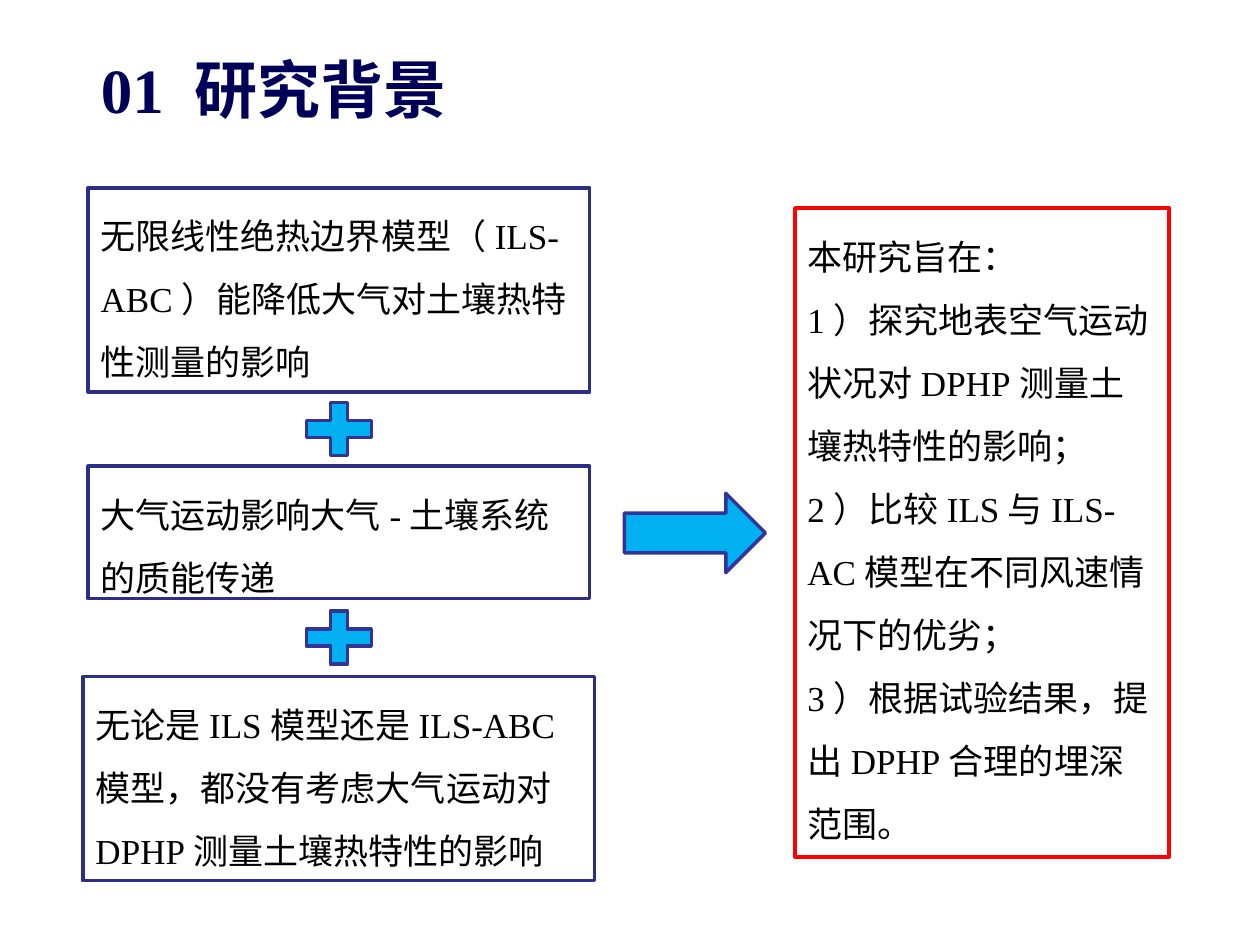
from dataclasses import dataclass
from itertools import pairwise

from pptx import Presentation
from pptx import util as u
from pptx.dml.color import RGBColor
from pptx.enum import shapes, text

CELL = 0.1  # the slide is a grid of 100 columns by 75 rows
COLUMNS, ROWS = 100, 75


@dataclass(frozen=True)
class Theme:
    font: str = "Times New Roman"
    title_size: int = 36
    body_size: int = 20
    title: str = "000058"
    ink: str = "000000"
    paper: str = "FFFFFF"
    premise: str = "2D2D8A"
    aim: str = "FF0000"
    symbol: str = "00B0F0"
    symbol_line: str = "333399"
    line_width: int = 2


THEME = Theme()

# Premises, top to bottom: first row, columns wide, rows high, wording
STACK_CENTRE = 26.9
PREMISES = [
    (14.9, 39.8, 16.2, "无限线性绝热边界模型（ILS-ABC）能降低大气对土壤热特性测量的影响"),
    (37, 39.8, 10.5, "大气运动影响大气-土壤系统的质能传递"),
    (53.7, 40.6, 16.2, "无论是ILS模型还是ILS-ABC模型，都没有考虑大气运动对DPHP测量土壤热特性的影响"),
]
AIMS = [
    "本研究旨在：",
    "1）探究地表空气运动状况对DPHP测量土壤热特性的影响；",
    "2）比较ILS与ILS-AC模型在不同风速情况下的优劣；",
    "3）根据试验结果，提出DPHP合理的埋深范围。",
]


def cells(*counts):
    return [u.Inches(count * CELL) for count in counts]


def set_font(para, size, colour, bold=False):
    para.font.name = THEME.font
    para.font.size = u.Pt(size)
    para.font.bold = bold
    para.font.color.rgb = RGBColor.from_string(colour)


def add_title(page, wording, *place):
    title = page.shapes.title
    title.left, title.top, title.width, title.height = cells(*place)
    frame = title.text_frame
    frame.text = wording
    frame.auto_size = text.MSO_AUTO_SIZE.NONE
    frame.vertical_anchor = text.MSO_ANCHOR.MIDDLE
    para = frame.paragraphs[0]
    para.alignment = text.PP_ALIGN.LEFT
    set_font(para, THEME.title_size, THEME.title, bold=True)


def add_outlined(page, kind, place, fill, line):
    shape = page.shapes.add_shape(kind, *cells(*place))
    shape.shadow.inherit = False
    shape.fill.solid()
    shape.fill.fore_color.rgb = RGBColor.from_string(fill)
    shape.line.color.rgb = RGBColor.from_string(line)
    shape.line.width = u.Pt(THEME.line_width)
    return shape


def add_text_box(page, lines, place, line):
    box = add_outlined(page, shapes.MSO_SHAPE.RECTANGLE, place, THEME.paper, line)
    frame = box.text_frame
    frame.word_wrap = True
    frame.auto_size = text.MSO_AUTO_SIZE.SHAPE_TO_FIT_TEXT
    frame.vertical_anchor = text.MSO_ANCHOR.TOP
    frame.text = "\n".join(lines)
    for para in frame.paragraphs:
        para.alignment = text.PP_ALIGN.LEFT
        para.line_spacing = 1.5
        set_font(para, THEME.body_size, THEME.ink)


def add_symbol(page, kind, centre, width, height, rotation=0):
    column, row = centre
    place = (column - width / 2, row - height / 2, width, height)
    symbol = add_outlined(page, kind, place, THEME.symbol, THEME.symbol_line)
    symbol.rotation = rotation


def main():
    deck = Presentation()
    deck.slide_width, deck.slide_height = cells(COLUMNS, ROWS)
    page = deck.slides.add_slide(deck.slide_layouts.get_by_name("Title Only"))
    add_title(page, "01 研究背景", 7, 3.1, 74.2, 7.9)

    # Premises, centred on one axis
    for top, width, height, wording in PREMISES:
        place = (STACK_CENTRE - width / 2, top, width, height)
        add_text_box(page, [wording], place, THEME.premise)

    # A plus in the middle of each gap between premises
    for (top, _, height, _), (next_top, *_) in pairwise(PREMISES):
        middle = (top + height + next_top) / 2
        add_symbol(page, shapes.MSO_SHAPE.MATH_PLUS, (STACK_CENTRE, middle), 7, 5.7)

    # Arrow turned to point right, towards the aims
    add_symbol(page, shapes.MSO_SHAPE.DOWN_ARROW, (55.15, 42.3), 6.3, 11.2, rotation=270)
    add_text_box(page, AIMS, (63.1, 16.5, 29.7, 51.5), THEME.aim)

    deck.save("out.pptx")


if __name__ == "__main__":
    main()
